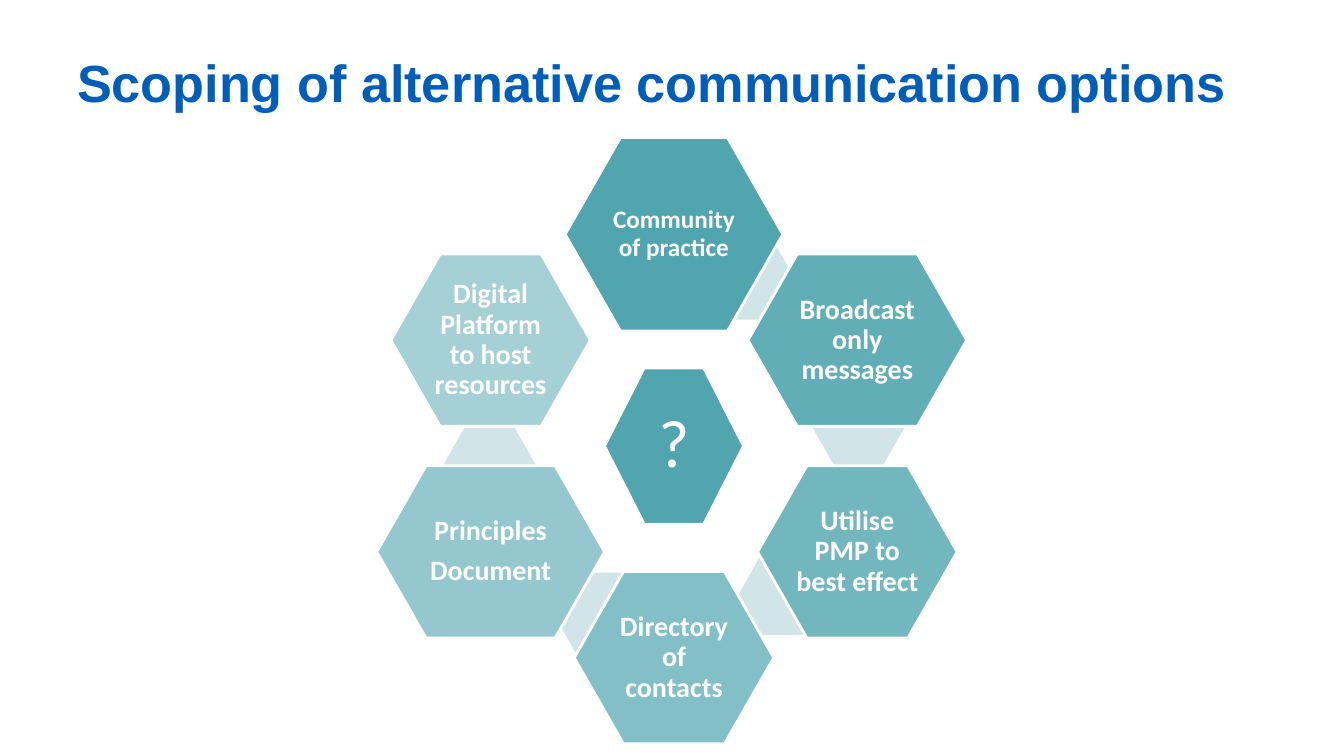
from math import cos, radians, sin

from pptx import Presentation
from pptx.dml.color import RGBColor
from pptx.enum.shapes import MSO_SHAPE
from pptx.enum.text import MSO_ANCHOR, PP_ALIGN
from pptx.util import Inches, Pt

# Content
TITLE = "Scoping of alternative communication options"
BLUE = RGBColor(0x00, 0x5E, 0xB8)
WHITE = RGBColor(0xFF, 0xFF, 0xFF)
PALE = RGBColor(0xD1, 0xE5, 0xE8)
TEAL = RGBColor(0x50, 0xA5, 0xAE)

# Clockwise from the top: paragraphs, fill, width, height, text size
OPTIONS = [
    (["Community of practice"], TEAL, 2.16, 1.92, 18),
    (["Broadcast only messages"], RGBColor(0x61, 0xAE, 0xB6), 2.17, 1.71, 20),
    (["Utilise PMP to best effect"], RGBColor(0x72, 0xB6, 0xBE), 1.98, 1.71, 20),
    (["Directory of contacts"], RGBColor(0x83, 0xBF, 0xC6), 1.98, 1.71, 20),
    (["Principles", "Document"], RGBColor(0x94, 0xC7, 0xCE), 2.26, 1.71, 20),
    (["Digital Platform to host resources"], RGBColor(0xA5, 0xD0, 0xD6), 1.98, 1.71, 20),
]
# Offsets of the pale links from the ring centre, one under each option but the last
LINKS = [(0.75, -1.65), (1.83, -0.18), (1.09, 1.48), (-0.75, 1.65), (-1.83, 0.18)]
LINK_SIZE = (0.91, 0.79)

# Layout
WIDTH, HEIGHT = 13.33, 7.5
CENTRE_X, CENTRE_Y = WIDTH / 2 + 0.02, HEIGHT * 0.59
RADIUS = 2.1

presentation = Presentation()
presentation.slide_width, presentation.slide_height = Inches(WIDTH), Inches(HEIGHT)
slide = presentation.slides.add_slide(presentation.slide_layouts[6])


def add_hexagon(offset_x, offset_y, width, height, fill, outlined=True):
    shape = slide.shapes.add_shape(
        MSO_SHAPE.HEXAGON,
        Inches(CENTRE_X + offset_x - width / 2),
        Inches(CENTRE_Y + offset_y - height / 2),
        Inches(width), Inches(height))
    shape.adjustments[0] = 0.286
    shape.adjustments[1] = 1.155
    shape.shadow.inherit = False
    shape.fill.solid()
    shape.fill.fore_color.rgb = fill
    if outlined:
        shape.line.color.rgb = WHITE
        shape.line.width = Pt(2)
    else:
        shape.line.fill.background()
    return shape


def write_label(shape, lines, size, inset, bold=True):
    frame = shape.text_frame
    frame.word_wrap = True
    frame.vertical_anchor = MSO_ANCHOR.MIDDLE
    frame.margin_left = frame.margin_right = Inches(inset)
    frame.margin_top = frame.margin_bottom = Inches(inset)
    for index, line in enumerate(lines):
        paragraph = frame.add_paragraph() if index else frame.paragraphs[0]
        paragraph.alignment = PP_ALIGN.CENTER
        paragraph.line_spacing = 0.9
        paragraph.space_after = Pt(round(size * 0.35))
        add_run(paragraph, line, "Calibri", size, WHITE, bold)


def add_run(paragraph, text, font_name, size, color, bold):
    run = paragraph.add_run()
    run.text = text
    run.font.name = font_name
    run.font.size = Pt(size)
    run.font.bold = bold
    run.font.color.rgb = color


# Title
title = slide.shapes.add_textbox(
    Inches(WIDTH * 0.05), Inches(0.18), Inches(WIDTH * 0.9), Inches(1.25))
title.text_frame.word_wrap = True
title.text_frame.vertical_anchor = MSO_ANCHOR.MIDDLE
add_run(title.text_frame.paragraphs[0], TITLE, "Arial", 37.3, BLUE, True)

# Central question
question = add_hexagon(0, 0, 1.38, 1.55, TEAL)
write_label(question, ["?"], 48, 0.07, bold=False)

# Ring of options, each above its pale link
for position, (lines, fill, width, height, size) in enumerate(OPTIONS):
    if position < len(LINKS):
        add_hexagon(*LINKS[position], *LINK_SIZE, PALE, outlined=False)
    angle = radians(360 / len(OPTIONS) * position)
    option = add_hexagon(RADIUS * sin(angle), -RADIUS * cos(angle), width, height, fill)
    write_label(option, lines, size, 0.03)

presentation.save("out.pptx")
